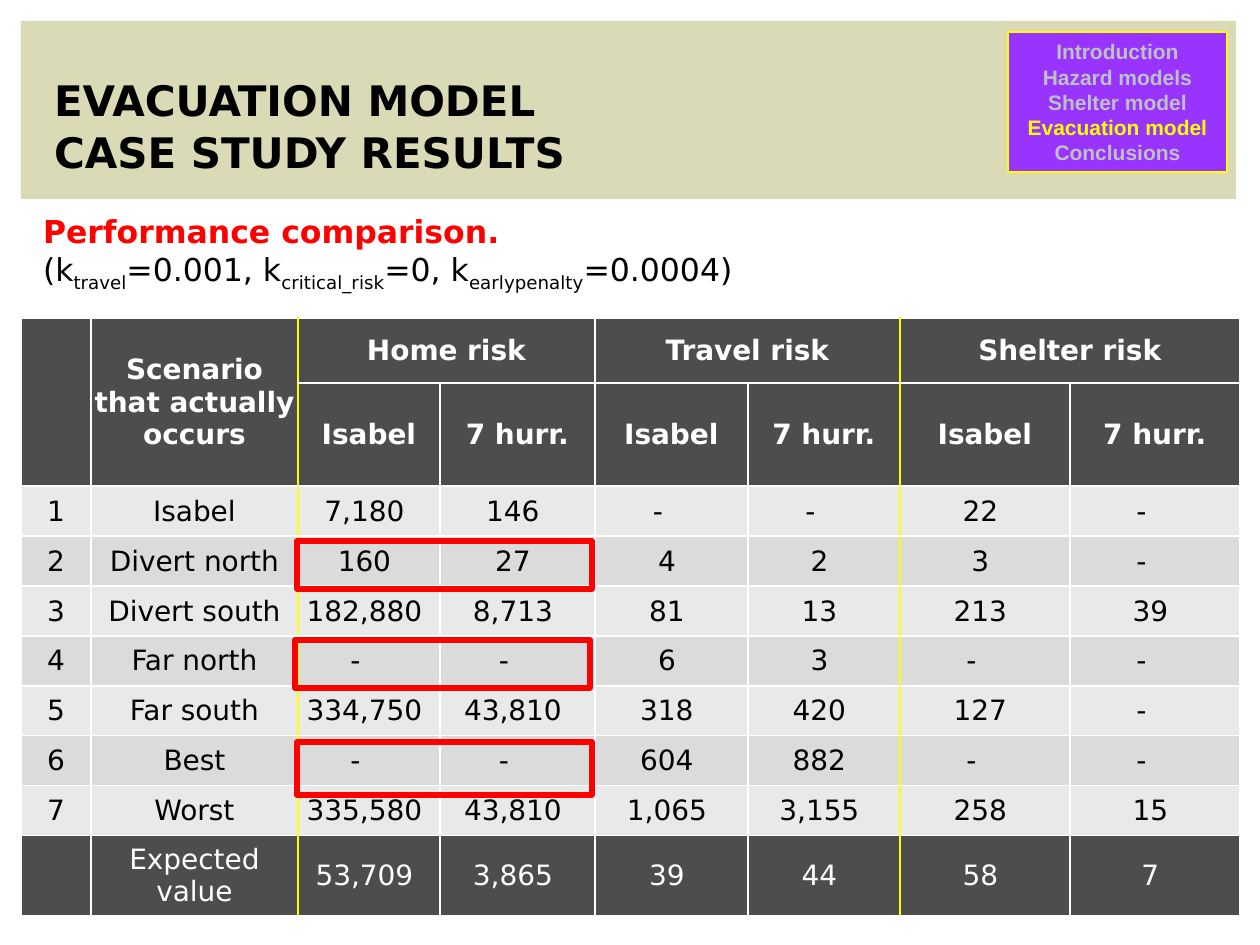
import lxml.etree
import pptx
import pptx.dml.color
import pptx.enum.shapes
import pptx.enum.text
import pptx.oxml.ns
import pptx.util

EMU_PER_PX = 914400 / 126
FONT = "DejaVu Sans"
COLORS = {
    "band": "DADAB6", "black": "000000", "white": "FFFFFF", "red": "FF0000",
    "menu": "9933FF", "muted": "C0C0C0", "yellow": "FFFF00",
    "dark": "4D4D4D", "light": "E9E9E9", "medium": "DBDBDB",
}

MENU = ["Introduction", "Hazard models", "Shelter model", "Evacuation model", "Conclusions"]
CURRENT_SECTION = "Evacuation model"
# Weights: normal parts alternate with subscripts
FORMULA = ["(k", "travel", "=0.001, k", "critical_risk", "=0, k", "earlypenalty", "=0.0004)"]

COLUMN_WIDTHS = [70, 207, 142, 155, 153, 152, 170, 170]
ROW_HEIGHTS = [65, 103] + [50] * 7 + [80]
GROUP_STARTS = (2, 6)  # columns with a yellow line on their left
ROWS = [
    ["", "Scenario that actually occurs", "Home risk", "", "Travel risk", "", "Shelter risk", ""],
    ["", ""] + ["Isabel", "7 hurr."] * 3,
    ["1", "Isabel", "7,180", "146", "-", "-", "22", "-"],
    ["2", "Divert north", "160", "27", "4", "2", "3", "-"],
    ["3", "Divert south", "182,880", "8,713", "81", "13", "213", "39"],
    ["4", "Far north", "-", "-", "6", "3", "-", "-"],
    ["5", "Far south", "334,750", "43,810", "318", "420", "127", "-"],
    ["6", "Best", "-", "-", "604", "882", "-", "-"],
    ["7", "Worst", "335,580", "43,810", "1,065", "3,155", "258", "15"],
    ["", "Expected value", "53,709", "3,865", "39", "44", "58", "7"],
]
HEADER_ROWS = 2
LAST_ROW = len(ROWS) - 1


def px(length):
    return pptx.util.Emu(round(length * EMU_PER_PX))


def color(name):
    return pptx.dml.color.RGBColor.from_string(COLORS[name])


def style_font(font, name, size, tint, bold=False):
    font.name = name
    font.size = pptx.util.Pt(size)
    font.bold = bold
    font.color.rgb = color(tint)


def clear_margins(frame):
    frame.margin_left = frame.margin_right = frame.margin_top = frame.margin_bottom = 0
    frame.word_wrap = True


def add_rectangle(page, left, top, width, height, fill=None, line=None, weight=1):
    box = page.shapes.add_shape(
        pptx.enum.shapes.MSO_SHAPE.RECTANGLE, px(left), px(top), px(width), px(height))
    box.shadow.inherit = False
    if fill:
        box.fill.solid()
        box.fill.fore_color.rgb = color(fill)
    else:
        box.fill.background()
    if line:
        box.line.color.rgb = color(line)
        box.line.width = pptx.util.Pt(weight)
    else:
        box.line.fill.background()
    return box


def add_heading(page, left, top, width, height):
    # Band goes behind the title placeholder
    band = add_rectangle(page, left, top, width, height, fill="band")
    title = page.shapes.title
    title._element.addprevious(band._element)
    title.left, title.top = px(left + 33), px(top + 16)
    title.width, title.height = px(1143), px(140)
    frame = title.text_frame
    clear_margins(frame)
    frame.vertical_anchor = pptx.enum.text.MSO_ANCHOR.BOTTOM
    frame.auto_size = pptx.enum.text.MSO_AUTO_SIZE.NONE
    frame.text = "EVACUATION MODEL\vCASE STUDY RESULTS"
    para = frame.paragraphs[0]
    para.alignment = pptx.enum.text.PP_ALIGN.LEFT
    para.line_spacing = 1.04
    style_font(para.font, FONT, 24, "black", bold=True)


def add_menu(page, left, top, width, height):
    box = add_rectangle(page, left, top, width, height, "menu", "yellow", 0.75)
    frame = box.text_frame
    frame.text = "\n".join(MENU)
    for para in frame.paragraphs:
        para.alignment = pptx.enum.text.PP_ALIGN.CENTER
        tint = "yellow" if para.text == CURRENT_SECTION else "muted"
        style_font(para.font, "Arial", 12, tint, bold=True)


def add_caption(page, left, top, width, height):
    box = page.shapes.add_textbox(px(left), px(top), px(width), px(height))
    frame = box.text_frame
    clear_margins(frame)
    frame.text = "Performance comparison."
    style_font(frame.paragraphs[0].font, FONT, 18, "red", bold=True)
    para = frame.add_paragraph()
    for index, part in enumerate(FORMULA):
        span = para.add_run()
        span.text = part
        if index % 2:
            span._r.get_or_add_rPr().set("baseline", "-25000")
    style_font(para.font, FONT, 18, "black")


def set_borders(cell, left, right):
    properties = cell._tc.get_or_add_tcPr()
    for side, tint in (("L", left), ("R", right), ("T", "white"), ("B", "white")):
        line = lxml.etree.SubElement(properties, pptx.oxml.ns.qn("a:ln" + side), w="12700")
        fill = lxml.etree.SubElement(line, pptx.oxml.ns.qn("a:solidFill"))
        lxml.etree.SubElement(fill, pptx.oxml.ns.qn("a:srgbClr"), val=COLORS[tint])


def format_cell(cell, row, column):
    text = ROWS[row][column]
    header = row < HEADER_ROWS
    dark = header or row == LAST_ROW
    set_borders(cell,
                "yellow" if column in GROUP_STARTS else "white",
                "yellow" if column + 1 in GROUP_STARTS else "white")
    cell.fill.solid()
    cell.fill.fore_color.rgb = color("dark" if dark else "medium" if row % 2 else "light")
    cell.vertical_anchor = pptx.enum.text.MSO_ANCHOR.MIDDLE
    cell.margin_left = cell.margin_right = cell.margin_top = px(1)
    cell.margin_bottom = 0
    # Values sit a little left of centre, dashes further
    if column >= 2 and not header:
        cell.margin_right = px(28 if text == "-" else 10)
    if text:
        cell.text = text
    para = cell.text_frame.paragraphs[0]
    para.alignment = pptx.enum.text.PP_ALIGN.CENTER
    style_font(para.font, FONT, 16, "white" if dark else "black", bold=header)


def add_results(page, left, top):
    table = page.shapes.add_table(
        len(ROWS), len(COLUMN_WIDTHS), px(left), px(top),
        px(sum(COLUMN_WIDTHS)), px(sum(ROW_HEIGHTS))).table
    table.first_row = table.horz_banding = False
    for column, width in zip(table.columns, COLUMN_WIDTHS):
        column.width = px(width)
    for row, height in zip(table.rows, ROW_HEIGHTS):
        row.height = px(height)
    for row in range(len(ROWS)):
        for column in range(len(COLUMN_WIDTHS)):
            format_cell(table.cell(row, column), row, column)
    # Merged headings
    for column in (0, 1):
        table.cell(0, column).merge(table.cell(1, column))
    for column in (2, 4, 6):
        table.cell(0, column).merge(table.cell(0, column + 1))


def add_highlights(page, left, top):
    for across, down, height in ((2, 0, 48), (0, 99, 48), (2, 201, 53)):
        add_rectangle(page, left + across, top + down, 295, height, line="red", weight=3)


def main():
    deck = pptx.Presentation()
    deck.slide_width, deck.slide_height = px(1260), px(945)
    page = deck.slides.add_slide(deck.slide_layouts[5])
    add_heading(page, 21, 21, 1215, 178)
    add_menu(page, 1008, 32, 219, 140)
    add_caption(page, 43, 212, 1217, 90)
    add_results(page, 21, 318)
    add_highlights(page, 295, 541)
    deck.save("out.pptx")


if __name__ == "__main__":
    main()
